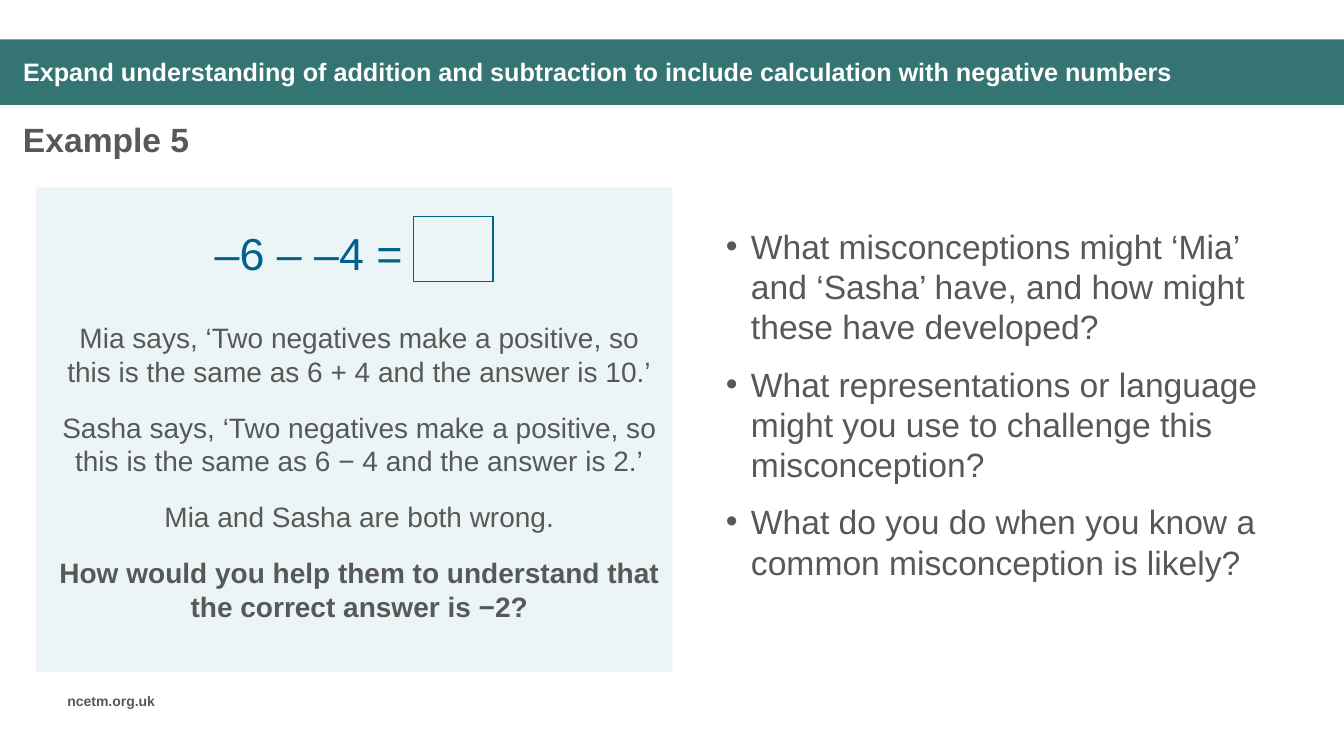
from dataclasses import dataclass
from typing import Optional

from lxml import etree
from pptx import Presentation
from pptx.dml.color import RGBColor
from pptx.enum.shapes import MSO_SHAPE
from pptx.enum.text import MSO_ANCHOR, PP_ALIGN
from pptx.oxml.ns import qn
from pptx.util import Inches, Pt

RECTANGLE = MSO_SHAPE.RECTANGLE
TOP, MIDDLE = MSO_ANCHOR.TOP, MSO_ANCHOR.MIDDLE
LEFT, CENTER = PP_ALIGN.LEFT, PP_ALIGN.CENTER

TEAL = RGBColor(0x34, 0x75, 0x74)
PALE_TEAL = RGBColor(0xEB, 0xF5, 0xF5)
GREY = RGBColor(0x58, 0x58, 0x58)
BLUE = RGBColor(0x00, 0x62, 0x8C)
WHITE = RGBColor(0xFF, 0xFF, 0xFF)
FONT = "Arial"


@dataclass(frozen=True)
class Box:
    left: float
    top: float
    width: float
    height: float

    def lengths(self) -> list:
        return [Inches(v) for v in (self.left, self.top, self.width, self.height)]


@dataclass(frozen=True)
class Panel:
    box: Box
    fill: Optional[RGBColor] = None
    line: Optional[RGBColor] = None


@dataclass(frozen=True)
class Line:
    text: str
    bold: bool = False


@dataclass(frozen=True)
class TextBlock:
    box: Box
    lines: list[Line]
    size: int
    color: RGBColor = GREY
    anchor: MSO_ANCHOR = TOP
    align: PP_ALIGN = LEFT
    space_before: int = 0
    space_after: int = 0
    line_spacing: float = 1.0
    bullet: bool = False
    wrap: bool = True


PANELS = [
    Panel(Box(0, 0.39, 13.33, 0.65), fill=TEAL),
    Panel(Box(0.36, 1.86, 6.31, 4.81), fill=PALE_TEAL),
    Panel(Box(4.1, 2.15, 0.79, 0.64), line=BLUE),
]

TEXT_BLOCKS = [
    # Heading and footer
    TextBlock(
        Box(0.13, 0.49, 11.82, 0.47),
        [Line("Expand understanding of addition and subtraction to include "
              "calculation with negative numbers", bold=True)],
        size=18, color=WHITE, anchor=MIDDLE, line_spacing=0.9,
    ),
    TextBlock(Box(0.13, 1.13, 6.66, 0.5), [Line("Example 5", bold=True)], size=24),
    TextBlock(Box(0.57, 6.82, 1.21, 0.27), [Line("ncetm.org.uk", bold=True)], size=10),
    # Worked example
    TextBlock(Box(2.03, 2.19, 2.08, 0.64), [Line("–6 – –4 =")],
              size=32, color=BLUE, wrap=False),
    TextBlock(
        Box(0.46, 3.13, 6.21, 3.14),
        [
            Line("Mia says, ‘Two negatives make a positive, so this is the same as "
                 "6 + 4 and the answer is 10.’"),
            Line("Sasha says, ‘Two negatives make a positive, so this is the same as "
                 "6 − 4 and the answer is 2.’"),
            Line("Mia and Sasha are both wrong."),
            Line("How would you help them to understand that the correct answer "
                 "is −2?", bold=True),
        ],
        size=20, align=CENTER, space_before=4, space_after=12,
    ),
    # Discussion questions
    TextBlock(
        Box(6.96, 1.9, 5.85, 4.21),
        [
            Line("What misconceptions might ‘Mia’ and ‘Sasha’ have, and how might "
                 "these have developed?"),
            Line("What representations or language might you use to challenge this "
                 "misconception?"),
            Line("What do you do when you know a common misconception is likely?"),
        ],
        size=24, anchor=MIDDLE, space_after=12, bullet=True,
    ),
]


def add_panel(slide, panel: Panel) -> None:
    shape = slide.shapes.add_shape(RECTANGLE, *panel.box.lengths())
    shape.shadow.inherit = False
    if panel.fill is None:
        shape.fill.background()
    else:
        shape.fill.solid()
        shape.fill.fore_color.rgb = panel.fill
    if panel.line is None:
        shape.line.fill.background()
    else:
        shape.line.color.rgb = panel.line
        shape.line.width = Pt(0.75)


def add_bullet(paragraph) -> None:
    properties = paragraph._p.get_or_add_pPr()
    properties.set("marL", str(Inches(0.39)))
    properties.set("indent", str(Inches(-0.25)))
    etree.SubElement(properties, qn("a:buFont")).set("typeface", FONT)
    etree.SubElement(properties, qn("a:buChar")).set("char", "•")


def add_text_block(slide, block: TextBlock) -> None:
    frame = slide.shapes.add_textbox(*block.box.lengths()).text_frame
    frame.word_wrap = block.wrap
    frame.vertical_anchor = block.anchor
    for index, line in enumerate(block.lines):
        paragraph = frame.add_paragraph() if index else frame.paragraphs[0]
        if block.bullet:
            add_bullet(paragraph)
        paragraph.alignment = block.align
        paragraph.line_spacing = block.line_spacing
        paragraph.space_before = Pt(block.space_before if index else 0)
        paragraph.space_after = Pt(block.space_after)
        run = paragraph.add_run()
        run.text = line.text
        run.font.name = FONT
        run.font.size = Pt(block.size)
        run.font.bold = line.bold
        run.font.color.rgb = block.color


def main() -> None:
    presentation = Presentation()
    presentation.slide_width = Inches(13.33)
    presentation.slide_height = Inches(7.5)
    slide = presentation.slides.add_slide(presentation.slide_layouts[6])
    for panel in PANELS:
        add_panel(slide, panel)
    for block in TEXT_BLOCKS:
        add_text_block(slide, block)
    presentation.save("out.pptx")


if __name__ == "__main__":
    main()
